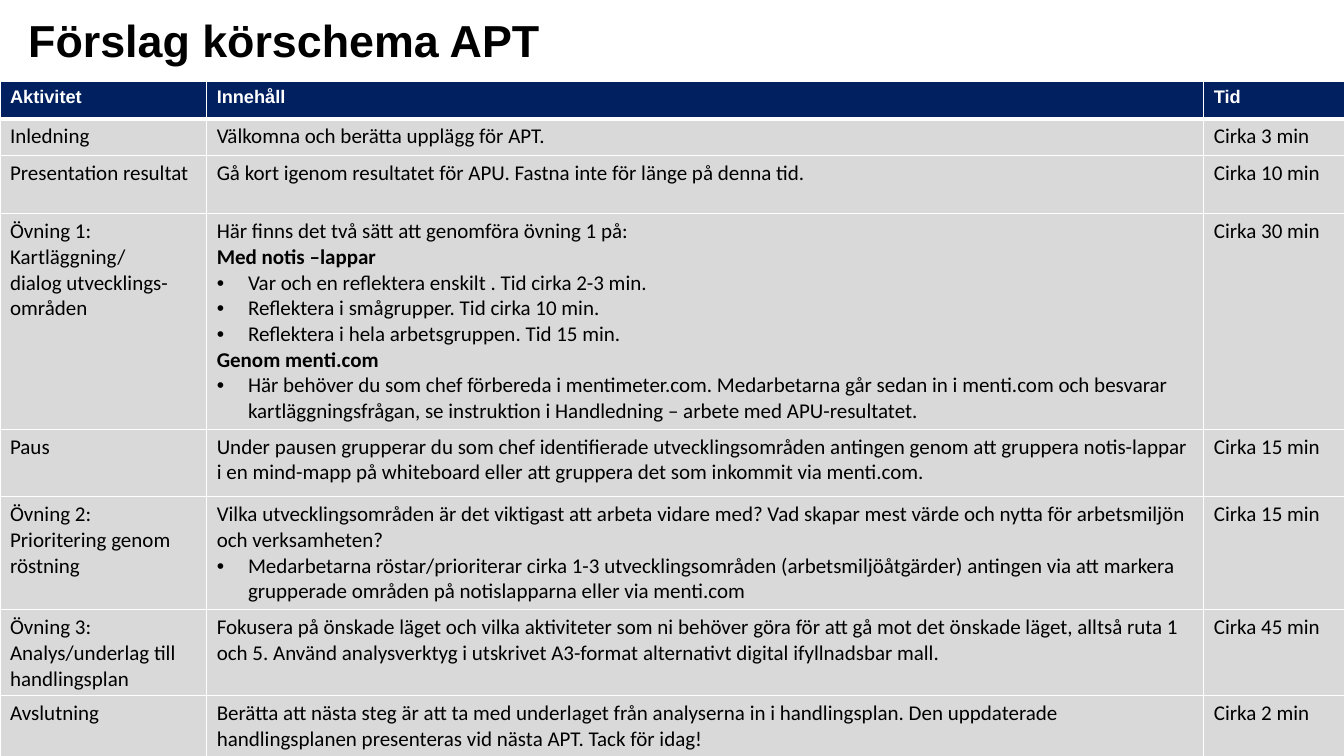
from dataclasses import dataclass

from lxml import etree
from pptx import Presentation
from pptx.dml.color import RGBColor
from pptx.enum.text import MSO_ANCHOR
from pptx.oxml.ns import qn
from pptx.util import Emu, Inches, Pt

TOP = MSO_ANCHOR.TOP
BLANK = 6
SLIDE_W, SLIDE_H = Inches(13.33), Inches(7.5)


@dataclass(frozen=True)
class TextStyle:
    font: str
    size: int
    color: str
    bold: bool = False


@dataclass(frozen=True)
class Theme:
    title: TextStyle = TextStyle("Arial", 32, "000000", True)
    head: TextStyle = TextStyle("Arial", 13, "FFFFFF", True)
    body: TextStyle = TextStyle("Calibri", 15, "000000")
    head_fill: str = "002060"
    body_fill: str = "D9D9D9"
    border: str = "FFFFFF"
    border_pt: int = 1
    head_rule_pt: int = 3
    bullet_indent: float = 0.31


@dataclass(frozen=True)
class Line:
    """One paragraph; bold_from is the first text line shown in bold."""
    text: str
    bullet: bool = False
    bold_from: int | None = None


@dataclass(frozen=True)
class Activity:
    height: float  # percent of the slide height
    name: str
    content: tuple[Line, ...]
    time: str


THEME = Theme()
COLUMNS = (15.38, 74.19, 10.65)  # percent of the slide width
TABLE_TOP = 10.8
TITLE_BOX = (2.1, 1.73, 79.82, 12.8)

SCHEDULE = (
    Activity(4.8, "Inledning", (Line("Välkomna och berätta upplägg för APT."),), "Cirka 3 min"),
    Activity(7.73, "Presentation resultat", (
        Line("Gå kort igenom resultatet för APU. Fastna inte för länge på denna tid."),
    ), "Cirka 10 min"),
    Activity(28.53, "Övning 1: Kartläggning/\vdialog utvecklings-områden", (
        Line("Här finns det två sätt att genomföra övning 1 på:\vMed notis –lappar", bold_from=1),
        Line("Var och en reflektera enskilt . Tid cirka 2-3 min.", bullet=True),
        Line("Reflektera i smågrupper. Tid cirka 10 min.", bullet=True),
        Line("Reflektera i hela arbetsgruppen. Tid 15 min.", bullet=True),
        Line("Genom menti.com", bold_from=0),
        Line("Här behöver du som chef förbereda i mentimeter.com. Medarbetarna går sedan in i "
             "menti.com och besvarar kartläggningsfrågan, se instruktion i Handledning – arbete "
             "med APU-resultatet.", bullet=True),
    ), "Cirka 30 min"),
    Activity(8.93, "Paus", (
        Line("Under pausen grupperar du som chef identifierade utvecklingsområden antingen genom "
             "att gruppera notis-lappar i en mind-mapp på whiteboard eller att gruppera det som "
             "inkommit via menti.com."),
    ), "Cirka 15 min"),
    Activity(14.93, "Övning 2:\vPrioritering genom röstning", (
        Line("Vilka utvecklingsområden är det viktigast att arbeta vidare med? Vad skapar mest "
             "värde och nytta för arbetsmiljön och verksamheten?"),
        Line("Medarbetarna röstar/prioriterar cirka 1-3 utvecklingsområden (arbetsmiljöåtgärder) "
             "antingen via att markera grupperade områden på notislapparna eller via menti.com",
             bullet=True),
    ), "Cirka 15 min"),
    Activity(11.4, "Övning 3: Analys/underlag till handlingsplan", (
        Line("Fokusera på önskade läget och vilka aktiviteter som ni behöver göra för att gå mot "
             "det önskade läget, alltså ruta 1 och 5. Använd analysverktyg i utskrivet A3-format "
             "alternativt digital ifyllnadsbar mall."),
    ), "Cirka 45 min"),
    Activity(11.07, "Avslutning", (
        Line("Berätta att nästa steg är att ta med underlaget från analyserna in i handlingsplan. "
             "Den uppdaterade handlingsplanen presenteras vid nästa APT. Tack för idag!"),
    ), "Cirka 2 min"),
)
HEADER = Activity(4.93, "Aktivitet", (Line("Innehåll"),), "Tid")


def across(percent: float) -> Emu:
    return Emu(round(SLIDE_W * percent / 100))


def down(percent: float) -> Emu:
    return Emu(round(SLIDE_H * percent / 100))


def add_bullet(p) -> None:
    pPr = p._p.get_or_add_pPr()
    indent = Inches(THEME.bullet_indent)
    pPr.set("marL", str(indent))
    pPr.set("indent", str(-indent))
    etree.SubElement(pPr, qn("a:buFont")).set("typeface", "Arial")
    etree.SubElement(pPr, qn("a:buChar")).set("char", "•")


def write(tf, lines: tuple[Line, ...], style: TextStyle) -> None:
    for i, line in enumerate(lines):
        p = tf.add_paragraph() if i else tf.paragraphs[0]
        p.text = line.text
        if line.bullet:
            add_bullet(p)
        for j, r in enumerate(p.runs):
            r.font.name = style.font
            r.font.size = Pt(style.size)
            r.font.color.rgb = RGBColor.from_string(style.color)
            r.font.bold = style.bold or (line.bold_from is not None and j >= line.bold_from)


def add_borders(cell, top_pt: int, bottom_pt: int) -> None:
    tcPr = cell._tc.get_or_add_tcPr()
    side_pt = THEME.border_pt
    for edge, width in (("L", side_pt), ("R", side_pt), ("T", top_pt), ("B", bottom_pt)):
        ln = etree.SubElement(tcPr, qn(f"a:ln{edge}"), w=str(Pt(width)))
        fill = etree.SubElement(ln, qn("a:solidFill"))
        etree.SubElement(fill, qn("a:srgbClr"), val=THEME.border)


def add_title(s, text: str) -> None:
    left, top, width, height = TITLE_BOX
    sp = s.shapes.add_textbox(across(left), down(top), across(width), down(height))
    tf = sp.text_frame
    tf.word_wrap = True
    tf.vertical_anchor = TOP
    tf.margin_left = tf.margin_right = tf.margin_top = tf.margin_bottom = 0
    write(tf, (Line(text),), THEME.title)


def add_schedule(s, rows: tuple[Activity, ...]) -> None:
    frame = s.shapes.add_table(len(rows), len(COLUMNS), 0, down(TABLE_TOP),
                               across(sum(COLUMNS)), down(sum(row.height for row in rows)))
    table = frame.table
    table.horz_banding = False
    for column, share in zip(table.columns, COLUMNS):
        column.width = across(share)
    for i, row in enumerate(rows):
        table.rows[i].height = down(row.height)
        style, fill = (THEME.body, THEME.body_fill) if i else (THEME.head, THEME.head_fill)
        top_pt = THEME.head_rule_pt if i == 1 else THEME.border_pt
        bottom_pt = THEME.border_pt if i else THEME.head_rule_pt
        for j, lines in enumerate(((Line(row.name),), row.content, (Line(row.time),))):
            cell = table.cell(i, j)
            add_borders(cell, top_pt, bottom_pt)
            cell.fill.solid()
            cell.fill.fore_color.rgb = RGBColor.from_string(fill)
            write(cell.text_frame, lines, style)


def main() -> None:
    prs = Presentation()
    prs.slide_width, prs.slide_height = SLIDE_W, SLIDE_H
    s = prs.slides.add_slide(prs.slide_layouts[BLANK])
    add_title(s, "Förslag körschema APT")
    add_schedule(s, (HEADER, *SCHEDULE))
    prs.save("out.pptx")


if __name__ == "__main__":
    main()
